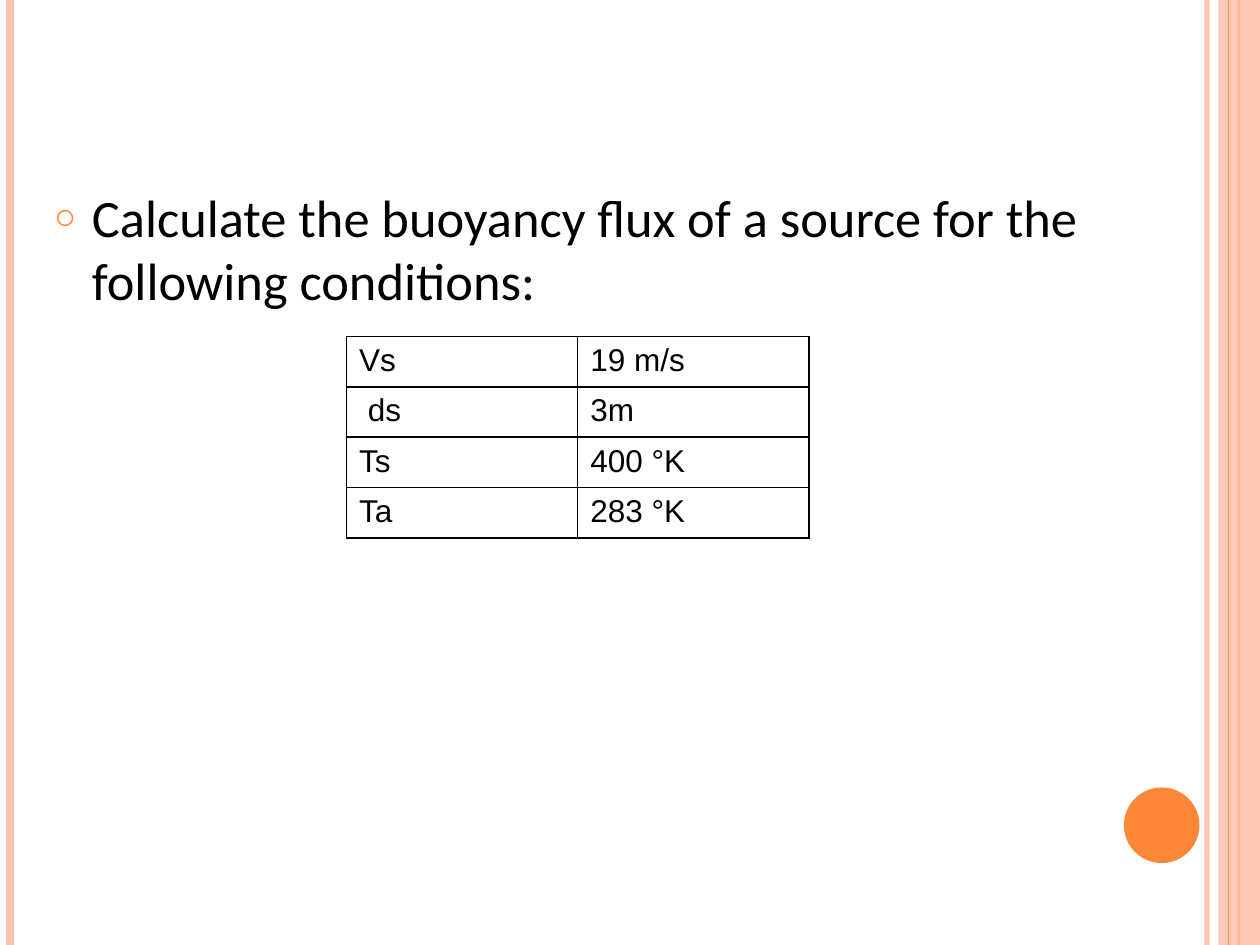
from lxml import etree
from pptx import Presentation
from pptx.dml.color import RGBColor
from pptx.enum.shapes import MSO_CONNECTOR, MSO_SHAPE
from pptx.enum.text import MSO_ANCHOR, MSO_AUTO_SIZE
from pptx.oxml.ns import qn
from pptx.util import Inches, Pt

STRAIGHT = MSO_CONNECTOR.STRAIGHT
RECTANGLE, OVAL = MSO_SHAPE.RECTANGLE, MSO_SHAPE.OVAL
TOP = MSO_ANCHOR.TOP
NO_AUTOFIT = MSO_AUTO_SIZE.NONE

COLORS = {"peach": "FEC3AE", "orange": "FE8637", "black": "000000"}
SLIDE_WIDTH, SLIDE_HEIGHT = 10, 7.5
CONDITIONS = [("Vs", "19 m/s"), (" ds", "3m"), ("Ts", "400 °K"), ("Ta", "283 °K")]


def rgb(color):
    return RGBColor.from_string(COLORS[color])


def add_xml(parent, tag, **attributes):
    return etree.SubElement(parent, qn(tag), attributes)


def set_opacity(fill_owner, percent):
    color = next(fill_owner.iter(qn("a:srgbClr")))
    add_xml(color, "a:alpha", val=str(percent * 1000))


def set_font(paragraph, name, size):
    paragraph.font.name = name
    paragraph.font.size = Pt(size)
    paragraph.font.color.rgb = rgb("black")


def add_stripe(slide, x, color, width, opacity=100):
    """Full-height vertical line."""
    line = slide.shapes.add_connector(
        STRAIGHT, Inches(x), Inches(0), Inches(x), Inches(SLIDE_HEIGHT))
    line.line.color.rgb = rgb(color)
    line.line.width = Pt(width)
    properties = line._element.spPr
    if opacity < 100:
        set_opacity(properties, opacity)
    add_xml(properties, "a:effectLst")


def add_block(slide, kind, left, top, width, height, color, opacity=100):
    shape = slide.shapes.add_shape(
        kind, Inches(left), Inches(top), Inches(width), Inches(height))
    shape.shadow.inherit = False
    shape.fill.solid()
    shape.fill.fore_color.rgb = rgb(color)
    shape.line.fill.background()
    if opacity < 100:
        set_opacity(shape._element.spPr, opacity)


def fill_body(body, text):
    body.left, body.top = Inches(0.33), Inches(1.42)
    body.width, body.height = Inches(8.92), Inches(1.17)
    frame = body.text_frame
    frame.word_wrap = True
    frame.auto_size = NO_AUTOFIT
    frame.vertical_anchor = TOP
    frame.text = text
    paragraph = frame.paragraphs[0]
    paragraph.space_before = Pt(6)
    # Hollow round bullet with a hanging indent
    properties = paragraph._p.get_or_add_pPr()
    properties.set("marL", str(Inches(0.3)))
    properties.set("indent", str(-Inches(0.3)))
    bullet_color = add_xml(properties, "a:buClr")
    add_xml(bullet_color, "a:srgbClr", val=COLORS["orange"])
    add_xml(properties, "a:buSzPct", val="70000")
    add_xml(properties, "a:buChar", char="○")
    set_font(paragraph, "Calibri", 30)


def add_borders(cell):
    properties = cell._tc.get_or_add_tcPr()
    for side in ("a:lnL", "a:lnR", "a:lnT", "a:lnB"):
        border = add_xml(properties, side, w=str(Pt(1)))
        add_xml(add_xml(border, "a:solidFill"), "a:srgbClr", val=COLORS["black"])


def add_conditions_table(slide, rows):
    table = slide.shapes.add_table(
        len(rows), len(rows[0]), Inches(2.75), Inches(2.67),
        Inches(3.67), Inches(0.4 * len(rows))).table
    table.first_row = table.horz_banding = False
    for row_index, values in enumerate(rows):
        for column_index, value in enumerate(values):
            cell = table.cell(row_index, column_index)
            cell.text = value
            set_font(cell.text_frame.paragraphs[0], "Arial", 18)
            add_borders(cell)
            cell.fill.background()


def main():
    presentation = Presentation()
    presentation.slide_width = Inches(SLIDE_WIDTH)
    presentation.slide_height = Inches(SLIDE_HEIGHT)
    slide = presentation.slides.add_slide(presentation.slide_layouts[1])
    title = slide.shapes.title._element
    title.getparent().remove(title)

    # Side decoration
    add_stripe(slide, 9.58, "peach", 3, opacity=93)
    add_stripe(slide, 0.08, "peach", 4.5)
    add_stripe(slide, 9.83, "orange", 1.5)
    add_block(slide, RECTANGLE, 9.67, 0, 0.33, SLIDE_HEIGHT, "peach", opacity=87)
    add_stripe(slide, 9.75, "orange", 0.75)
    add_block(slide, OVAL, 8.92, 6.25, 0.6, 0.6, "orange")

    # Exercise and its data
    fill_body(slide.placeholders[1],
              "Calculate the buoyancy flux of a source for the following conditions:")
    add_conditions_table(slide, CONDITIONS)

    presentation.save("out.pptx")


if __name__ == "__main__":
    main()
